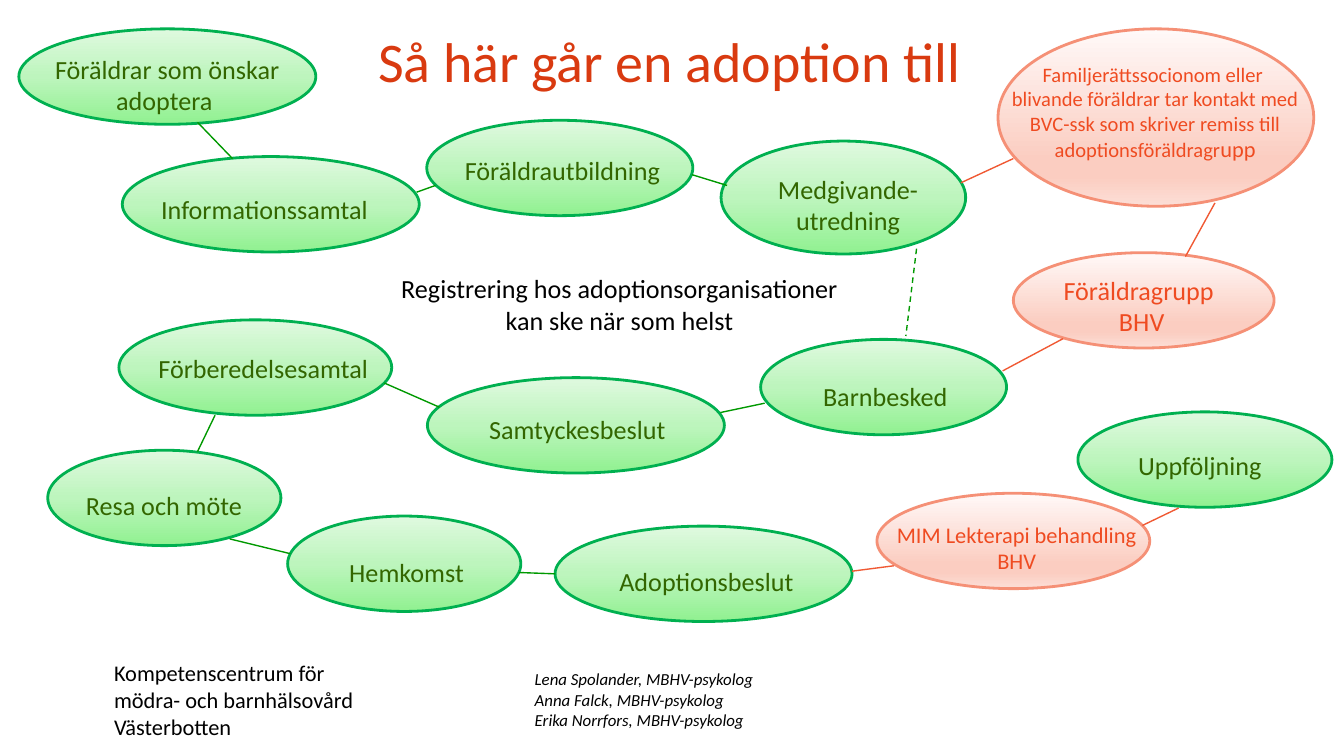
from dataclasses import dataclass

from lxml import etree
from pptx import Presentation
from pptx.dml.color import RGBColor
from pptx.enum.dml import MSO_LINE
from pptx.enum.shapes import MSO_CONNECTOR, MSO_SHAPE
from pptx.enum.text import MSO_ANCHOR, PP_ALIGN
from pptx.oxml.ns import qn
from pptx.util import Pt

SCALE = 4572
LEFT, CENTER = PP_ALIGN.LEFT, PP_ALIGN.CENTER
MIDDLE = MSO_ANCHOR.MIDDLE
OVAL = MSO_SHAPE.OVAL
STRAIGHT = MSO_CONNECTOR.STRAIGHT
DASH = MSO_LINE.DASH


@dataclass(frozen=True)
class Tone:
    """Colours of one family of steps."""

    stops: tuple
    angle: int
    outline: str
    text: str
    link: str


@dataclass(frozen=True)
class Theme:
    """Colours, font and type sizes of the slide."""

    font: str = "Calibri"
    title_color: str = "D93A10"
    ink: str = "000000"
    title: int = 30
    body: int = 14
    small: int = 12
    fine: int = 11
    credit: int = 9
    outline: float = 1.5
    link: float = 0.75
    process: Tone = Tone(((0, "91F191"), (50, "BDF5BD"), (100, "DFF9DF")),
                         270, "00B050", "336600", "009900")
    support: Tone = Tone(((0, "FFF9F8"), (74, "FBCDC1"), (83, "FBCDC1"), (100, "FCDED6")),
                         90, "F59076", "EF4B21", "F05933")


THEME = Theme()

PROCESS_STEPS = [
    ("Informationssamtal", (182, 233, 442, 142), (220, 278, 364, 68), LEFT),
    ("Förberedelsesamtal", (177, 476, 406, 142), (216, 514, 364, 68), LEFT),
    ("Medgivande- utredning", (1073, 210, 364, 168), (1080, 248, 364, 114), CENTER),
    ("Föräldrautbildning", (635, 179, 396, 142), (672, 220, 364, 68), LEFT),
    ("Resa och möte", (71, 670, 347, 142), (108, 719, 316, 68), LEFT),
    ("Hemkomst", (428, 768, 347, 142), (500, 818, 248, 68), LEFT),
    ("Samtyckesbeslut", (636, 562, 442, 142), (708, 606, 364, 68), LEFT),
    ("Adoptionsbeslut", (826, 783, 442, 142), (902, 832, 364, 68), LEFT),
    ("Uppföljning", (1604, 613, 378, 142), (1674, 659, 262, 68), LEFT),
    ("Barnbesked", (1132, 505, 366, 142), (1205, 556, 278, 68), LEFT),
    ("Föräldrar som önskar adoptera ", (28, 43, 442, 142), (48, 69, 402, 114), CENTER),
]

SUPPORT_STEPS = [
    ("Föräldragrupp \nBHV", (1508, 376, 388, 142), (1496, 398, 406, 114), THEME.body),
    ("MIM Lekterapi behandling\nBHV", (1305, 734, 406, 142), (1310, 765, 406, 100),
     THEME.small),
]

REFERRAL_OVAL = (1485, 43, 470, 264)
REFERRAL_LABEL = (1464, 82, 510, 172)
REFERRAL_TEXT = ("Familjerättssocionom eller \nblivande föräldrar tar kontakt med "
                 "BVC-ssk som skriver remiss till adoptionsföräldragr")

SUPPORT_LINKS = [
    (1754, 756, 1700, 782), (1330, 842, 1268, 850), (1582, 504, 1492, 552),
    (1808, 302, 1764, 382), (1508, 236, 1430, 272),
]

PROCESS_LINKS = [
    (294, 182, 346, 236), (620, 286, 648, 276), (1030, 260, 1082, 276),
    (1072, 614, 1138, 600), (572, 570, 654, 606), (320, 618, 294, 672),
    (772, 852, 826, 854), (342, 802, 432, 824),
]

WAITING_LINK = (1364, 370, 1348, 500)


def px(*lengths):
    """Turn px lengths into EMU."""
    return [length * SCALE for length in lengths]


def style_span(span, size, color, italic=False):
    """Set the font of one run."""
    span.font.name = THEME.font
    span.font.size = Pt(size)
    span.font.color.rgb = RGBColor.from_string(color)
    span.font.italic = italic


def style_frame(frame, size, color, align, italic=False):
    """Format every paragraph and run of a text frame."""
    for para in frame.paragraphs:
        para.alignment = align
        for span in para.runs:
            style_span(span, size, color, italic)


def add_title(page, text, place):
    """Place and format the title placeholder."""
    title = page.shapes.title
    title.left, title.top, title.width, title.height = px(*place)
    title.text_frame.text = text
    title.text_frame.vertical_anchor = MIDDLE
    style_frame(title.text_frame, THEME.title, THEME.title_color, CENTER)


def add_text(page, text, place, size, color, align=LEFT, italic=False):
    """Add a wrapping text box and return it."""
    box = page.shapes.add_textbox(*px(*place))
    box.text_frame.word_wrap = True
    box.text_frame.text = text
    style_frame(box.text_frame, size, color, align, italic)
    return box


def fill_gradient(shape, tone):
    """Fill a shape with the gradient stops of a tone."""
    shape.fill.gradient()
    gradient = shape._element.spPr.find(qn("a:gradFill"))
    stop_list = gradient.find(qn("a:gsLst"))
    for stop in list(stop_list):
        stop_list.remove(stop)
    for position, color in tone.stops:
        stop = etree.SubElement(stop_list, qn("a:gs"), pos=str(position * 1000))
        etree.SubElement(stop, qn("a:srgbClr"), val=color)
    gradient.find(qn("a:lin")).set("ang", str(tone.angle * 60000))


def add_oval(page, place, tone):
    """Add the oval of one step."""
    oval = page.shapes.add_shape(OVAL, *px(*place))
    oval.shadow.inherit = False
    fill_gradient(oval, tone)
    oval.line.color.rgb = RGBColor.from_string(tone.outline)
    oval.line.width = Pt(THEME.outline)


def add_step(page, text, oval, label, tone, size, align):
    """Add an oval with its label and return the label."""
    add_oval(page, oval, tone)
    return add_text(page, text, label, size, tone.text, align)


def add_link(page, ends, tone, dash=None):
    """Add a thin line between two steps."""
    link = page.shapes.add_connector(STRAIGHT, *px(*ends))
    link.line.color.rgb = RGBColor.from_string(tone.link)
    link.line.width = Pt(THEME.link)
    if dash:
        link.line.dash_style = dash
    etree.SubElement(link._element.spPr, qn("a:effectLst"))


def add_referral(page):
    """Add the referral step, whose last letters are larger."""
    label = add_step(page, REFERRAL_TEXT, REFERRAL_OVAL, REFERRAL_LABEL,
                     THEME.support, THEME.fine, CENTER)
    span = label.text_frame.paragraphs[-1].add_run()
    span.text = "upp"
    style_span(span, THEME.small, THEME.support.text)


def main():
    """Build the adoption process slide."""
    deck = Presentation()
    deck.slide_width, deck.slide_height = px(2000, 1125)
    page = deck.slides.add_slide(deck.slide_layouts[5])
    add_title(page, "Så här går en adoption till", (514, 36, 964, 108))
    add_text(page, "Lena Spolander, MBHV-psykolog\nAnna Falck, MBHV-psykolog\n"
             "Erika Norrfors, MBHV-psykolog", (776, 986, 464, 112),
             THEME.credit, THEME.ink, italic=True)
    add_text(page, "Kompetenscentrum för mödra- och barnhälsovård\nVästerbotten",
             (150, 971, 410, 142), THEME.small, THEME.ink)
    add_text(page, "Registrering hos adoptionsorganisationer kan ske när som helst",
             (566, 396, 712, 114), THEME.body, THEME.ink, CENTER)
    for text, oval, label, align in PROCESS_STEPS:
        add_step(page, text, oval, label, THEME.process, THEME.body, align)
    for text, oval, label, size in SUPPORT_STEPS:
        add_step(page, text, oval, label, THEME.support, size, CENTER)
    add_referral(page)
    for ends in SUPPORT_LINKS:
        add_link(page, ends, THEME.support)
    for ends in PROCESS_LINKS:
        add_link(page, ends, THEME.process)
    add_link(page, WAITING_LINK, THEME.process, DASH)
    deck.save("out.pptx")


if __name__ == "__main__":
    main()
